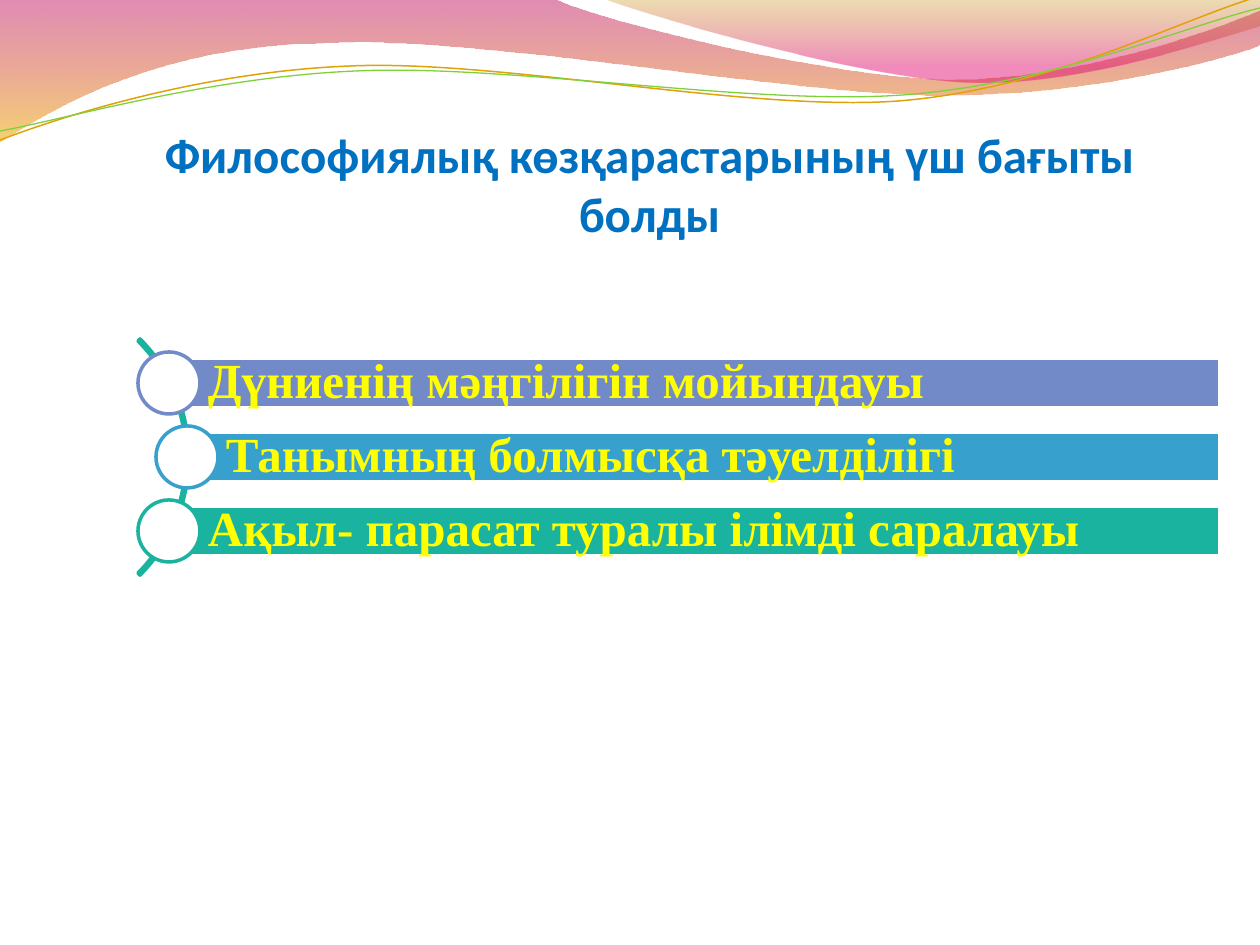
import math

from lxml import etree
from pptx import Presentation
from pptx.dml.color import RGBColor
from pptx.enum.shapes import MSO_SHAPE
from pptx.enum.text import MSO_ANCHOR, PP_ALIGN
from pptx.oxml.ns import qn
from pptx.util import Pt

PX = 914400 // 126
BLOCK_ARC, BAR, DISC = MSO_SHAPE.BLOCK_ARC, MSO_SHAPE.RECTANGLE, MSO_SHAPE.OVAL
MIDDLE, BOTTOM = MSO_ANCHOR.MIDDLE, MSO_ANCHOR.BOTTOM
LEFT, CENTER = PP_ALIGN.LEFT, PP_ALIGN.CENTER

WHITE = RGBColor(0xFF, 0xFF, 0xFF)
YELLOW = RGBColor(0xFF, 0xFF, 0x00)
BLUE = RGBColor(0x00, 0x70, 0xC0)
PERIWINKLE = RGBColor(0x73, 0x8A, 0xC8)
SKY = RGBColor(0x38, 0xA0, 0xCC)
TEAL = RGBColor(0x1A, 0xB3, 0x9F)
CRIMSON = RGBColor(0xBD, 0x00, 0x59)
AMBER = RGBColor(0xF0, 0xAB, 0x00)
OCHRE = RGBColor(0xC3, 0x8B, 0x00)
MAGENTA = RGBColor(0xE1, 0x00, 0x6B)
GOLD = RGBColor(0xE0, 0xA2, 0x09)
GREEN = RGBColor(0x7F, 0xD1, 0x3B)

TITLE = "Философиялық көзқарастарының үш бағыты болды"
DIRECTIONS = [
    ("Дүниенің мәңгілігін мойындауы", PERIWINKLE),
    ("Танымның болмысқа тәуелділігі", SKY),
    ("Ақыл- парасат туралы ілімді саралауы", TEAL),
]

BROAD_WAVE = [
    (0, 0), (554, -1), (600, 21, 837, 79, 955, 79), (1075, 79, 1207, 33, 1260, 11),
    (1261, 45), (1239, 55, 1096, 96, 940, 95), (784, 95, 481, 35, 324, 43),
    (163, 45, 58, 105, -1, 142),
]
RIGHT_WAVE = [
    (604, -1), (641, 14, 859, 78, 969, 82), (1079, 86, 1211, 40, 1260, 26), (1260, 0),
]
GOLD_STRAND = [
    (0, 140), (60, 117, 199, 72, 349, 66), (498, 59, 747, 112, 898, 101),
    (1050, 89, 1182, 19, 1257, -3),
]
GREEN_STRAND = [
    (0, 131), (59, 121, 207, 77, 357, 71), (508, 64, 752, 106, 903, 95),
    (1053, 84, 1185, 26, 1260, 8),
]


def add_curve(slide, left, top, steps, closed):
    """Draw an outline whose six-number steps are cubic curves."""
    ends = [step[-2:] for step in steps]
    builder = slide.shapes.build_freeform(*ends[0], scale=PX)
    builder.add_line_segments(ends[1:], close=closed)
    outline = builder.convert_to_shape(left * PX, top * PX)
    outline.shadow.inherit = False
    min_x, min_y = (min(values) for values in zip(*ends))
    segments = list(outline.element.iter(qn("a:lnTo")))
    for segment, step in zip(segments, steps[1:]):
        if len(step) == 6:
            segment.tag = qn("a:cubicBezTo")
            for place, (x, y) in enumerate((step[:2], step[2:4])):
                handle = etree.Element(qn("a:pt"), x=str(x - min_x), y=str(y - min_y))
                segment.insert(place, handle)
    return outline


def add_wave(slide, left, top, steps, gradient):
    """Fill a closed wave with a downward gradient of translucent colours."""
    wave = add_curve(slide, left, top, steps, True)
    wave.line.fill.background()
    wave.fill.gradient()
    wave.fill.gradient_angle = 270
    for stop, (position, color, _) in zip(wave.fill.gradient_stops, gradient):
        stop.position = position
        stop.color.rgb = color
    for tint, (_, _, opacity) in zip(wave.element.iter(qn("a:srgbClr")), gradient):
        etree.SubElement(tint, qn("a:alpha"), val=str(opacity * 1000))


def add_strand(slide, left, top, steps, color, width):
    """Draw an open thin line along the waves."""
    strand = add_curve(slide, left, top, steps, False)
    strand.fill.background()
    strand.line.color.rgb = color
    strand.line.width = Pt(width)


def add_header(slide, left, top):
    """Place the waves and strands along the top edge."""
    add_wave(slide, left, top, BROAD_WAVE, [(0, CRIMSON, 45), (1, AMBER, 55)])
    add_wave(slide, left, top, RIGHT_WAVE, [(0, OCHRE, 30), (0.8, MAGENTA, 45)])
    add_strand(slide, left, top, GOLD_STRAND, GOLD, 0.85)
    add_strand(slide, left, top, GREEN_STRAND, GREEN, 0.75)


def write(holder, text, font, color, align, anchor, insets):
    """Set one bold paragraph inside a shape or text box."""
    frame = holder.text_frame
    frame.text = text
    frame.word_wrap = True
    frame.vertical_anchor = anchor
    (frame.margin_left, frame.margin_top,
     frame.margin_right, frame.margin_bottom) = (inset * PX for inset in insets)
    paragraph = frame.paragraphs[0]
    paragraph.alignment = align
    letters = paragraph.runs[0].font
    letters.name, letters.size, letters.bold = font, Pt(28), True
    letters.color.rgb = color
    return paragraph


def add_title(slide, left, top, width, height):
    """Place the centred title at the bottom of its box."""
    title = slide.shapes.add_textbox(left * PX, top * PX, width * PX, height * PX)
    write(title, TITLE, "Calibri", BLUE, CENTER, BOTTOM, (0, 6, 0, 0))


def add_part(slide, kind, box, fill, line):
    """Add a preset shape with a two-point outline."""
    part = slide.shapes.add_shape(kind, *(length * PX for length in box))
    part.shadow.inherit = False
    part.fill.solid()
    part.fill.fore_color.rgb = fill
    part.line.color.rgb = line
    part.line.width = Pt(2)
    return part


def add_directions(slide, left, top, width, height):
    """Hang the bars with their discs on an arc that bulges to the right."""
    radius, pitch, bar_height, disc = 167, 74, 50, 62
    center_x, center_y = left - 118, top + height // 2
    arc_box = (center_x - radius, center_y - radius, 2 * radius, 2 * radius)
    arc = add_part(slide, BLOCK_ARC, arc_box, TEAL, TEAL)
    for place, value in enumerate((189, 27, 0.009)):
        arc.adjustments[place] = value
    for row, (direction, color) in enumerate(DIRECTIONS):
        rise = (row - 1) * pitch
        x = center_x + int(math.sqrt((radius - 2) ** 2 - rise ** 2))
        y = center_y + rise
        bar_box = (x, y - bar_height // 2, left + width - x, bar_height)
        bar = add_part(slide, BAR, bar_box, color, WHITE)
        line = write(bar, direction, "Times New Roman", YELLOW, LEFT, MIDDLE, (39, 10, 10, 10))
        line.line_spacing = 0.9
        disc_box = (x - disc // 2, y - disc // 2, disc, disc)
        add_part(slide, DISC, disc_box, WHITE, color)


def main():
    """Build the slide and save it."""
    deck = Presentation()
    deck.slide_width, deck.slide_height = 1260 * PX, 945 * PX
    slide = deck.slides.add_slide(deck.slide_layouts[6])
    add_header(slide, 0, 0)
    add_title(slide, 95, 135, 1109, 107)
    add_directions(slide, 140, 339, 1080, 236)
    deck.save("out.pptx")


if __name__ == "__main__":
    main()
